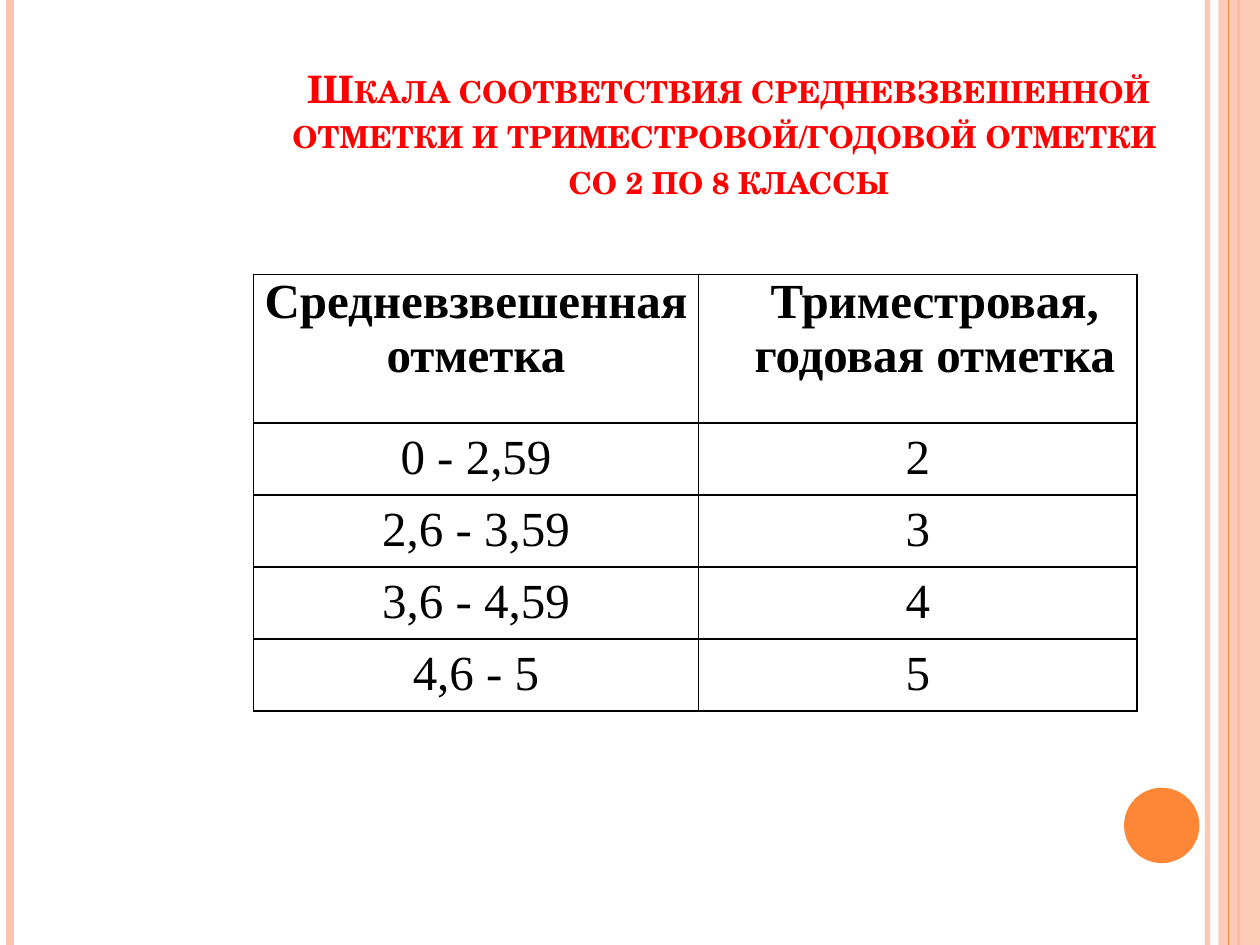
import pptx
import pptx.dml.color
import pptx.enum.shapes
import pptx.enum.text
import pptx.oxml.ns
import pptx.util
from lxml import etree
from pptx.util import Cm, Pt

RGBColor = pptx.dml.color.RGBColor
PINK = RGBColor(0xFE, 0xC3, 0xAE)
ORANGE = RGBColor(0xFE, 0x86, 0x37)
RED = RGBColor(0xFF, 0x00, 0x00)
BLACK = RGBColor(0x00, 0x00, 0x00)

CENTER = pptx.enum.text.PP_ALIGN.CENTER
SHAPES = pptx.enum.shapes.MSO_SHAPE
qn = pptx.oxml.ns.qn

TITLE = ("Шкала соответствия средневзвешенной отметки "
         "и триместровой/годовой отметки \vсо 2 по 8 классы")
HEADERS = ["Средневзвешенная отметка", "Триместровая, годовая отметка"]
GRADES = [("0 - 2,59", "2"), ("2,6 - 3,59", "3"), ("3,6 - 4,59", "4"), ("4,6 - 5", "5")]


def set_opacity(fill_parent, percent):
    color = fill_parent.find(".//" + qn("a:srgbClr"))
    etree.SubElement(color, qn("a:alpha")).set("val", str(percent * 1000))


def add_stripe(page, x, top, height, color, width, opacity=100):
    stripe = page.shapes.add_connector(
        pptx.enum.shapes.MSO_CONNECTOR.STRAIGHT, x, top, x, top + height)
    stripe.line.color.rgb = color
    stripe.line.width = Pt(width)
    properties = stripe._element.spPr
    if opacity < 100:
        set_opacity(properties, opacity)
    etree.SubElement(properties, qn("a:effectLst"))


def add_solid(page, kind, left, top, width, height, color):
    shape = page.shapes.add_shape(kind, left, top, width, height)
    shape.shadow.inherit = False
    shape.fill.solid()
    shape.fill.fore_color.rgb = color
    shape.line.fill.background()
    return shape


def add_decoration(page, left, top, width, height):
    """Draw the edge stripes, the right band and the orange disc."""
    right = left + width
    add_stripe(page, right - Cm(1.06), top, height, PINK, 3, 93)
    add_stripe(page, left + Cm(0.21), top, height, PINK, 4.5)
    add_stripe(page, right - Cm(0.43), top, height, ORANGE, 1.5)
    band = add_solid(page, SHAPES.RECTANGLE, right - Cm(0.84), top, Cm(0.84), height, PINK)
    set_opacity(band._element.spPr, 87)
    add_stripe(page, right - Cm(0.64), top, height, ORANGE, 0.75)
    add_solid(page, SHAPES.OVAL, right - Cm(2.74), top + Cm(15.88), Cm(1.52), Cm(1.52), ORANGE)


def format_runs(para, font_name, size, color, bold):
    for span in para.runs:
        span.font.name = font_name
        span.font.size = Pt(size)
        span.font.color.rgb = color
        span.font.bold = bold


def add_title(page, left, top, width, height):
    box = page.shapes.add_textbox(left, top, width, height)
    frame = box.text_frame
    frame.word_wrap = True
    frame.vertical_anchor = pptx.enum.text.MSO_ANCHOR.BOTTOM
    frame.margin_bottom = Cm(1.04)
    frame.text = TITLE
    para = frame.paragraphs[0]
    para.alignment = CENTER
    format_runs(para, "TeX Gyre Schola", 21.6, RED, True)
    for span in para.runs:
        span._r.get_or_add_rPr().set("cap", "small")


def add_borders(cell):
    properties = cell._tc.get_or_add_tcPr()
    for side in ("lnL", "lnR", "lnT", "lnB"):
        border = etree.SubElement(properties, qn("a:" + side), w=str(Pt(1)))
        fill = etree.SubElement(border, qn("a:solidFill"))
        etree.SubElement(fill, qn("a:srgbClr"), val=str(BLACK))


def fill_cell(cell, text, is_header):
    add_borders(cell)
    cell.fill.background()
    cell.margin_left = cell.margin_right = Cm(0.08)
    cell.margin_top = cell.margin_bottom = 0
    cell.text_frame.text = text
    para = cell.text_frame.paragraphs[0]
    para.alignment = CENTER
    if not is_header:
        para.line_spacing = 1.15
    format_runs(para, "Times New Roman", 28, BLACK, is_header)


def add_grade_table(page, left, top, width, height):
    rows = [HEADERS, *GRADES]
    table = page.shapes.add_table(len(rows), 2, left, top, width, height).table
    table.columns[0].width = Cm(8.97)
    table.columns[1].width = width - Cm(8.97)
    header_height = Cm(3)
    for index, texts in enumerate(rows):
        is_header = index == 0
        table.rows[index].height = (
            header_height if is_header else (height - header_height) // len(GRADES))
        for column, text in enumerate(texts):
            fill_cell(table.cell(index, column), text, is_header)
    indented = table.cell(0, 1).text_frame.paragraphs[0]
    indented._p.get_or_add_pPr().set("marL", str(Cm(0.69)))


def main():
    deck = pptx.Presentation()
    deck.slide_width, deck.slide_height = Cm(25.4), Cm(19.05)
    page = deck.slides.add_slide(deck.slide_layouts[6])
    add_decoration(page, 0, 0, deck.slide_width, deck.slide_height)
    add_title(page, Cm(4.7), Cm(1.93), Cm(19.99), Cm(3.18))
    add_grade_table(page, Cm(5.11), Cm(5.53), Cm(17.81), Cm(8.8))
    deck.save("out.pptx")


if __name__ == "__main__":
    main()
